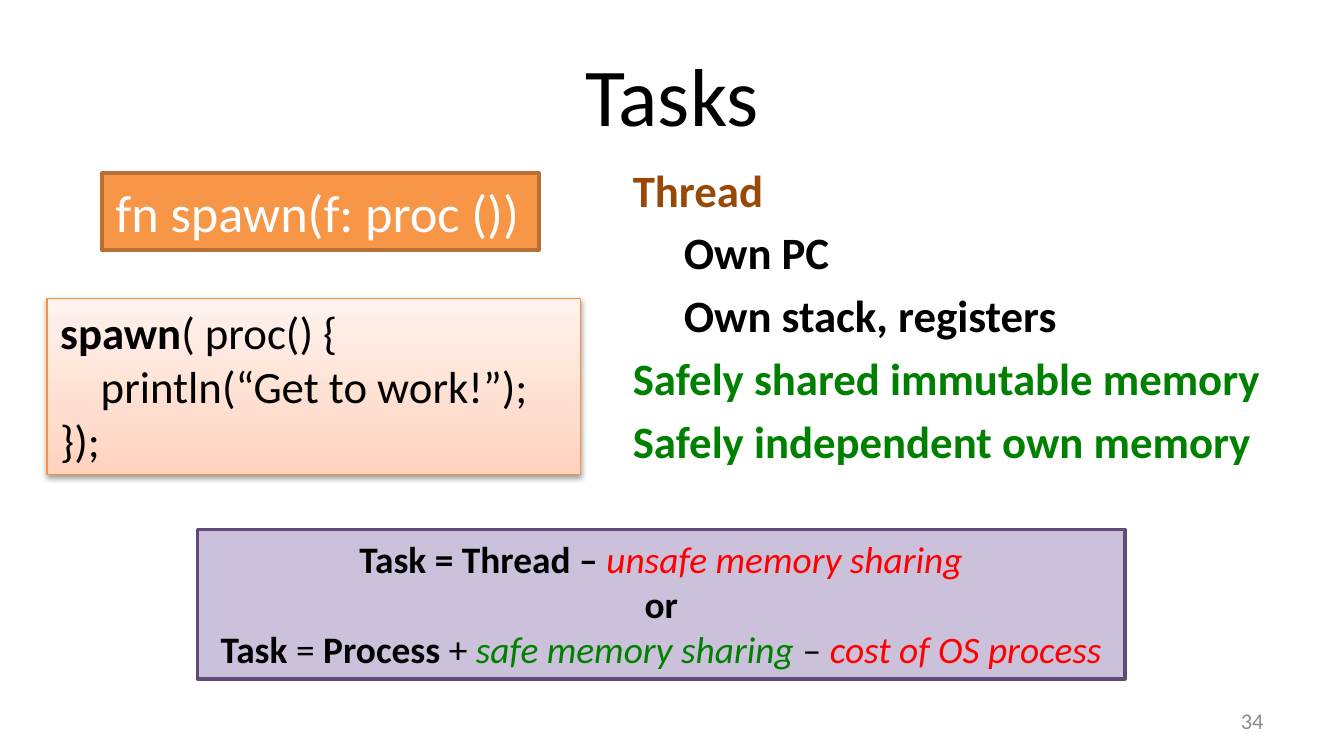
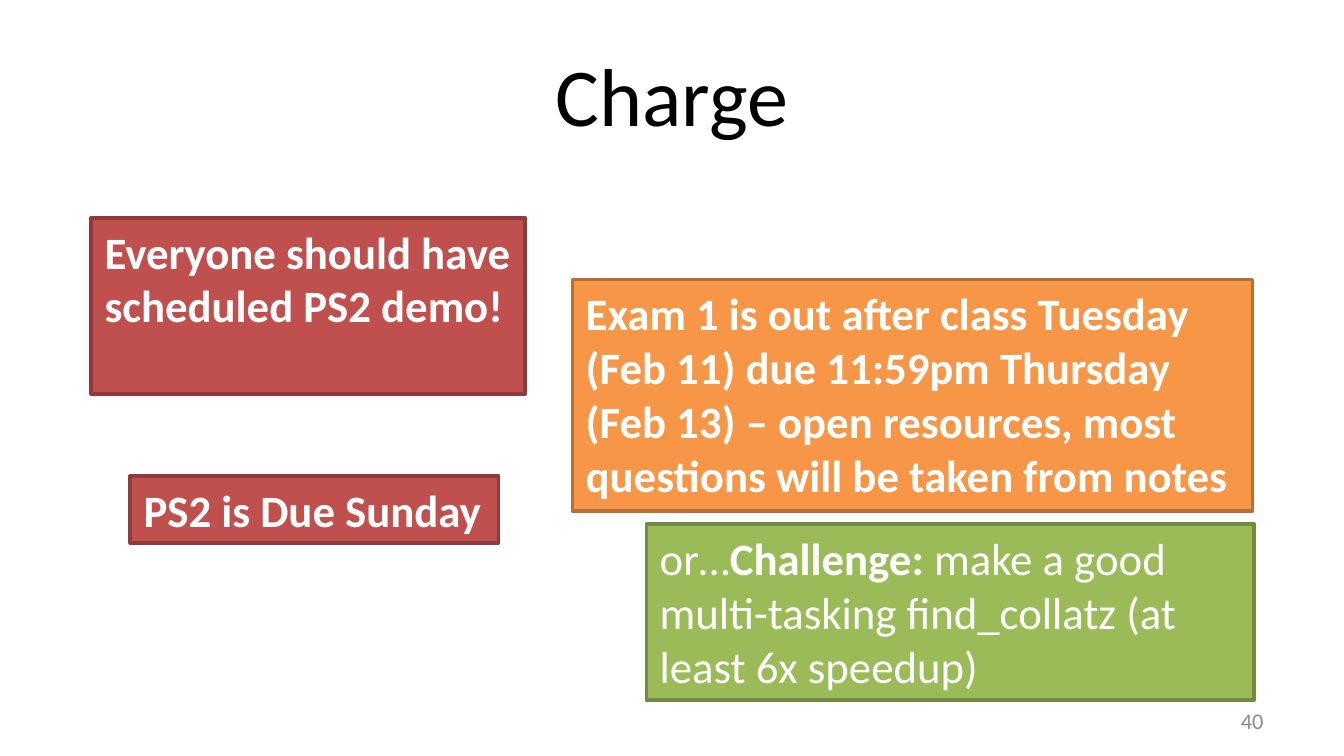
from lxml import etree
from pptx import Presentation
from pptx import util as u
from pptx.dml import color
from pptx.enum import shapes, text
from pptx.oxml import ns, parse_xml

FONT = "Calibri"
BLACK, WHITE, GREY = "000000", "FFFFFF", "8C8C8C"
BROWN, GREEN, RED = "984807", "008000", "FF0000"
ORANGE_BOX = ("F79646", "B76F34")
RED_BOX = ("C0504D", "8E3B39")
GREEN_BOX = ("9BBB59", "738A42")
PURPLE_BOX = ("CCC1DA", "5F4A78")
CODE_STOPS = ((0, "FFD2BD"), (35, "FFDED0"), (100, "FFF2ED"))
CODE_LINE = "F69240"
LEFT, CENTER, RIGHT = text.PP_ALIGN.LEFT, text.PP_ALIGN.CENTER, text.PP_ALIGN.RIGHT
TOP, MIDDLE = text.MSO_ANCHOR.TOP, text.MSO_ANCHOR.MIDDLE


def rgb(value):
    """Turn a hex string into a colour."""
    return color.RGBColor.from_string(value)


def place(sp, box):
    """Move and size a shape to left, top, width, height in inches."""
    sp.left, sp.top, sp.width, sp.height = map(u.Inches, box)


def format_run(r, size=24, fg=BLACK, bold=False, italic=False):
    """Set the font of one run."""
    r.font.name, r.font.size = FONT, u.Pt(size)
    r.font.bold, r.font.italic = bold, italic
    r.font.color.rgb = rgb(fg)


def write(tf, paragraphs, align=LEFT, anchor=TOP, gap=0, **fmt):
    """Fill a text frame with paragraphs, each a list of (text, format) runs."""
    tf.word_wrap = True
    tf.auto_size = text.MSO_AUTO_SIZE.NONE
    tf.vertical_anchor = anchor
    for i, runs in enumerate(paragraphs):
        p = tf.add_paragraph() if i else tf.paragraphs[0]
        p.alignment = align
        if i and gap:
            p.space_before = u.Pt(gap)
        for words, changes in runs:
            r = p.add_run()
            r.text = words
            format_run(r, **{**fmt, **changes})


def plain(*lines):
    """Make one unformatted run per line."""
    return [[(line, {})] for line in lines]


def add_text(s, box, paragraphs, **fmt):
    """Add a text box."""
    sp = s.shapes.add_textbox(*map(u.Inches, box))
    write(sp.text_frame, paragraphs, **fmt)
    return sp


def add_box(s, box, colors, paragraphs, **fmt):
    """Add a filled and outlined rectangle with text."""
    fill, line = colors
    sp = s.shapes.add_shape(shapes.MSO_SHAPE.RECTANGLE, *map(u.Inches, box))
    sp.shadow.inherit = False
    sp.fill.solid()
    sp.fill.fore_color.rgb = rgb(fill)
    sp.line.color.rgb = rgb(line)
    sp.line.width = u.Pt(2)
    write(sp.text_frame, paragraphs, **fmt)
    return sp


def add_code(s, box, paragraphs):
    """Add a code panel with a gradient fill and a soft shadow."""
    sp = add_box(s, box, (CODE_STOPS[0][1], CODE_LINE), paragraphs)
    sp.line.width = u.Pt(0.75)
    stops = "".join(f'<a:gs pos="{pos * 1000}"><a:srgbClr val="{c}"/></a:gs>' for pos, c in CODE_STOPS)
    pr = sp.element.spPr
    pr.replace(pr.find(ns.qn("a:solidFill")), parse_xml(
        f'<a:gradFill {ns.nsdecls("a")} rotWithShape="1"><a:gsLst>{stops}</a:gsLst>'
        '<a:lin ang="16200000" scaled="0"/></a:gradFill>'))
    shadow = etree.SubElement(
        pr.find(ns.qn("a:effectLst")), ns.qn("a:outerShdw"), blurRad=str(u.Pt(3.1)),
        dist=str(u.Pt(1.6)), dir="5400000", rotWithShape="0")
    tint = etree.SubElement(shadow, ns.qn("a:srgbClr"), val=BLACK)
    etree.SubElement(tint, ns.qn("a:alpha"), val="38000")


def add_slide(prs, title, number):
    """Add a slide with its title and slide number."""
    s = prs.slides.add_slide(prs.slide_layouts[5])
    place(s.shapes.title, (0.5, 0.23, 9, 0.94))
    write(s.shapes.title.text_frame, plain(title), align=CENTER, anchor=MIDDLE, size=44)
    add_text(s, (7.17, 5.21, 2.33, 0.3), plain(str(number)),
             align=RIGHT, anchor=MIDDLE, size=12, fg=GREY)
    return s


def tasks_slide(prs):
    """Build the slide that defines tasks."""
    s = add_slide(prs, "Tasks", 34)
    features = [("Thread", BROWN, 0), ("Own PC", BLACK, 0.38), ("Own stack, registers", BLACK, 0.38),
                ("Safely shared immutable memory", GREEN, 0),
                ("Safely independent own memory", GREEN, 0)]
    sp = add_text(s, (4.61, 1.16, 4.89, 2.77),
                  [[(words, {"fg": fg})] for words, fg, _ in features], bold=True, gap=4.8)
    for p, (_, _, indent) in zip(sp.text_frame.paragraphs, features):
        p._p.get_or_add_pPr().set("marL", str(u.Inches(indent)))
    add_box(s, (0.76, 1.29, 3.25, 0.57), ORANGE_BOX, plain("fn spawn(f: proc ())"), size=28, fg=WHITE)
    add_code(s, (0.35, 2.22, 3.97, 1.31),
             [[("spawn", {"bold": True}), ("( proc() {", {})],
              *plain("    println(“Get to work!”);", "});")])
    bold = {"bold": True}
    bad, good = {"fg": RED, "italic": True}, {"fg": GREEN, "italic": True}
    add_box(s, (1.47, 3.94, 6.9, 1.11), PURPLE_BOX,
            [[("Task = Thread – ", bold), ("unsafe memory sharing", bad)],
             [("or", bold)],
             [("Task", bold), (" = ", {}), ("Process", bold), (" + ", {}),
              ("safe memory sharing", good), (" – ", {}), ("cost of OS process", bad)]],
            align=CENTER, size=20)


def charge_slide(prs):
    """Build the slide that lists what is due."""
    s = add_slide(prs, "Charge", 40)
    notices = [
        ((0.97, 3.54, 2.74, 0.5), RED_BOX, "PS2 is Due Sunday"),
        ((4.26, 2.08, 5.06, 1.72), ORANGE_BOX,
         "Exam 1 is out after class Tuesday (Feb 11) due 11:59pm Thursday (Feb 13) "
         "– open resources, most questions will be taken from notes"),
        ((0.68, 1.62, 3.23, 1.31), RED_BOX, "Everyone should have scheduled PS2 demo!"),
    ]
    for box, colors, words in notices:
        add_box(s, box, colors, plain(words), fg=WHITE, bold=True)
    add_box(s, (4.81, 3.9, 4.52, 1.31), GREEN_BOX,
            [[("or…", {}), ("Challenge:", {"bold": True}),
              (" make a good multi-tasking find_collatz (at least 6x speedup)", {})]], fg=WHITE)


def main():
    """Build and save the presentation."""
    prs = Presentation()
    prs.slide_width = u.Inches(10)
    prs.slide_height = prs.slide_width * 9 // 16
    tasks_slide(prs)
    charge_slide(prs)
    prs.save("out.pptx")


if __name__ == "__main__":
    main()
